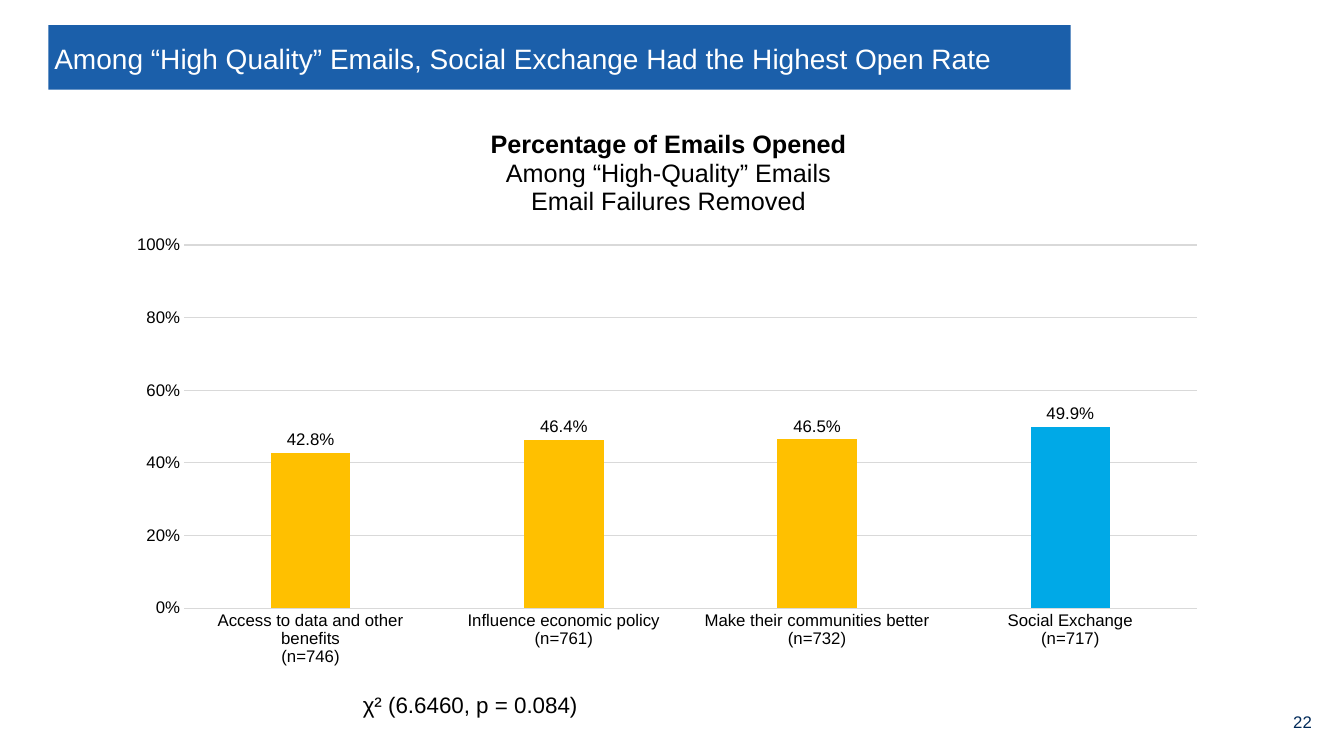
from pptx import Presentation
from pptx.chart.data import CategoryChartData
from pptx.dml.color import RGBColor
from pptx.enum.chart import XL_CHART_TYPE, XL_LABEL_POSITION, XL_TICK_MARK
from pptx.enum.shapes import MSO_SHAPE
from pptx.enum.text import MSO_ANCHOR, PP_ALIGN
from pptx.oxml import parse_xml
from pptx.oxml.ns import nsdecls
from pptx.util import Inches, Pt

BLACK, WHITE, NAVY, BLUE = "000000", "FFFFFF", "002A59", "1B5FAA"
GOLD, SKY, GRID = "FFC000", "00A9E7", "D9D9D9"

OPEN_RATES = {
    "Access to data and other benefits\n(n=746)": 0.428,
    "Influence economic policy\n(n=761)": 0.464,
    "Make their communities better\n(n=732)": 0.465,
    "Social Exchange\n(n=717)": 0.499,
}
CHART_TITLE = [
    "Percentage of Emails Opened",
    "Among “High-Quality” Emails",
    "Email Failures Removed",
]


def color(hex_code):
    return RGBColor.from_string(hex_code)


def style_font(font, size, hex_code, bold=False):
    font.name = "Arial"
    font.size = Pt(size)
    font.bold = bold
    font.color.rgb = color(hex_code)


def style_line(line, hex_code):
    line.color.rgb = color(hex_code)
    line.width = Pt(0.75)


def add_banner(page, left, top, width, height):
    banner = page.shapes.add_shape(
        MSO_SHAPE.RECTANGLE, Inches(left), Inches(top), Inches(width), Inches(height))
    banner.shadow.inherit = False
    banner.fill.solid()
    banner.fill.fore_color.rgb = color(BLUE)
    banner.line.fill.background()


def add_text(page, text, left, top, width, height, size, hex_code,
             align=PP_ALIGN.LEFT, anchor=MSO_ANCHOR.MIDDLE):
    box = page.shapes.add_textbox(
        Inches(left), Inches(top), Inches(width), Inches(height))
    frame = box.text_frame
    frame.word_wrap = True
    frame.vertical_anchor = anchor
    frame.text = text
    para = frame.paragraphs[0]
    para.alignment = align
    style_font(para.runs[0].font, size, hex_code)


def add_chart_title(chart, lines):
    """Write the title lines, the first one bold."""
    frame = chart.chart_title.text_frame
    for index, line in enumerate(lines):
        para = frame.paragraphs[0] if index == 0 else frame.add_paragraph()
        para.text = line
        style_font(para.runs[0].font, 18, BLACK, bold=index == 0)
    chart.chart_title.include_in_layout = False


def place_plot(chart, left, top, width, height):
    """Fix the inner plot area, in fractions of the chart."""
    plot_area = chart._chartSpace.chart.plotArea
    for layout in plot_area.xpath("c:layout"):
        plot_area.remove(layout)
    plot_area.insert(0, parse_xml(
        f'<c:layout {nsdecls("c")}><c:manualLayout><c:layoutTarget val="inner"/>'
        '<c:xMode val="edge"/><c:yMode val="edge"/>'
        f'<c:x val="{left}"/><c:y val="{top}"/><c:w val="{width}"/><c:h val="{height}"/>'
        '</c:manualLayout></c:layout>'))


def style_axes(chart):
    for axis in (chart.category_axis, chart.value_axis):
        axis.major_tick_mark = axis.minor_tick_mark = XL_TICK_MARK.NONE
        style_font(axis.tick_labels.font, 12, BLACK)
    style_line(chart.category_axis.format.line, GRID)
    values = chart.value_axis
    values.minimum_scale, values.maximum_scale, values.major_unit = 0, 1, 0.2
    values.tick_labels.number_format = "0%"
    values.tick_labels.number_format_is_linked = False
    values.format.line.fill.background()
    style_line(values.major_gridlines.format.line, GRID)


def style_bars(plot):
    plot.gap_width, plot.overlap = 219, -27
    plot.vary_by_categories = False
    series = plot.series[0]
    highlight = series.points[len(OPEN_RATES) - 1]
    for bar, hex_code in ((series, GOLD), (highlight, SKY)):
        bar.format.fill.solid()
        bar.format.fill.fore_color.rgb = color(hex_code)
    labels = series.data_labels
    labels.show_value = True
    labels.position = XL_LABEL_POSITION.OUTSIDE_END
    labels.number_format = "0.0%"
    labels.number_format_is_linked = False
    style_font(labels.font, 12, BLACK)


def add_open_rate_chart(page, left, top, width, height):
    data = CategoryChartData()
    data.categories = list(OPEN_RATES)
    data.add_series("Series 1", list(OPEN_RATES.values()))
    chart = page.shapes.add_chart(
        XL_CHART_TYPE.COLUMN_CLUSTERED, Inches(left), Inches(top),
        Inches(width), Inches(height), data).chart
    style_font(chart.font, 10, NAVY)
    chart.has_legend = False
    add_chart_title(chart, CHART_TITLE)
    place_plot(chart, 0.06, 0.24, 0.92, 0.64)
    style_axes(chart)
    style_bars(chart.plots[0])


def main():
    deck = Presentation()
    deck.slide_width, deck.slide_height = Inches(13.33), Inches(7.5)
    page = deck.slides.add_slide(deck.slide_layouts[6])
    add_banner(page, 0.48, 0.25, 10.14, 0.64)
    add_text(page, "22", 12.44, 7, 0.67, 0.33, 12, NAVY, align=PP_ALIGN.RIGHT)
    add_text(page, "Among “High Quality” Emails, Social Exchange Had the Highest Open Rate",
             0.44, 0.25, 10.18, 0.66, 20, WHITE)
    add_open_rate_chart(page, 1.17, 1.08, 10.92, 5.63)
    add_text(page, "χ² (6.6460, p = 0.084)", 3.5, 6.81, 8.33, 0.37, 16, BLACK,
             anchor=MSO_ANCHOR.TOP)
    deck.save("out.pptx")


if __name__ == "__main__":
    main()
